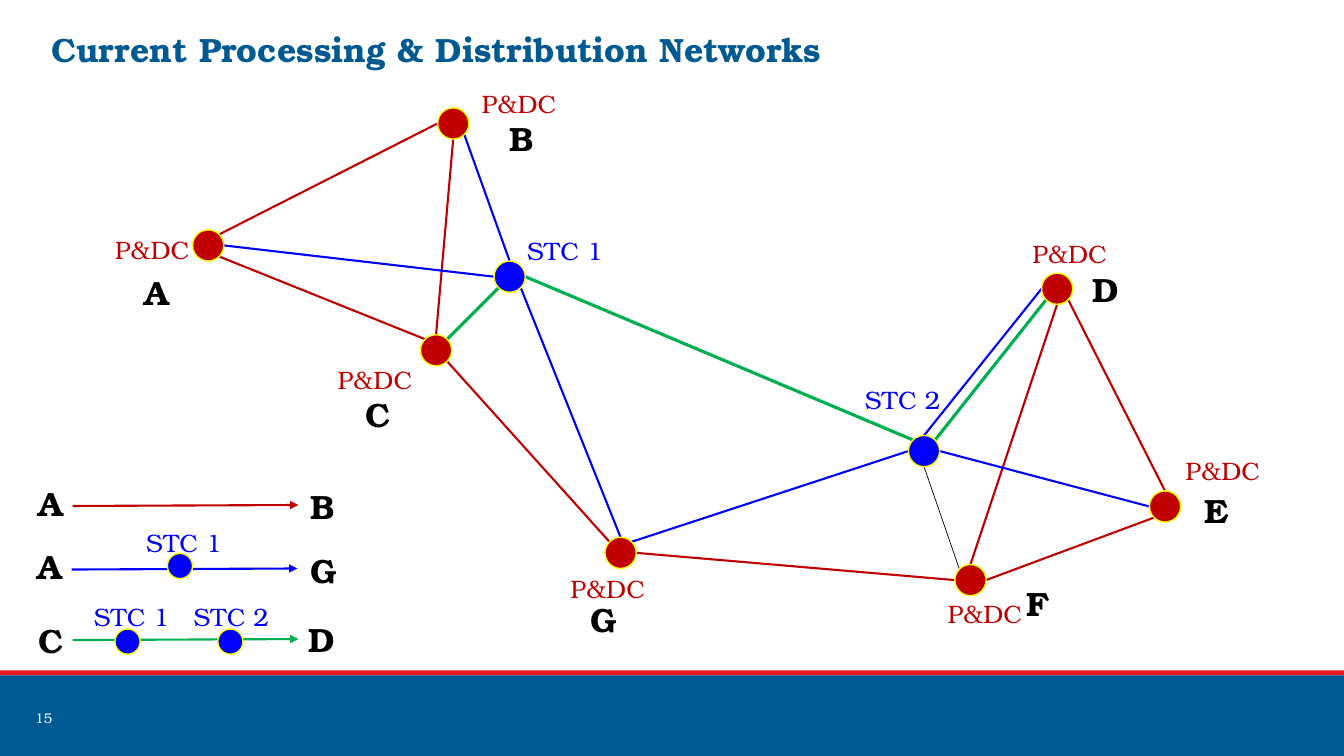
import pptx
import pptx.dml.color
import pptx.enum.shapes
import pptx.enum.text
import pptx.oxml
import pptx.oxml.ns
import pptx.util

PX = 9144  # EMU per px, 100 px to the inch
FONT = "TeX Gyre Bonum"
RED, BLUE, GREEN = "C00000", "0000FF", "00B050"
BLACK, WHITE, YELLOW = "000000", "FFFFFF", "FFFF00"
NAVY, STRIPE = "005A92", "E71921"
NODE, DOT = 31, 25
LABEL_WIDTH, LABEL_HEIGHT = 97, 40
LETTER_WIDTH, LETTER_HEIGHT = 61, 50

# name: (node corner, label corner, letter corner)
CENTERS = {
    "A": ((191, 228), (104, 228), (133, 265)),
    "B": ((434, 107), (468, 83), (495, 112)),
    "C": ((417, 332), (325, 357), (353, 386)),
    "D": ((1033, 271), (1014, 232), (1074, 262)),
    "E": ((1140, 487), (1166, 447), (1185, 481)),
    "F": ((947, 560), (930, 589), (1008, 573)),
    "G": ((600, 533), (556, 564), (576, 589)),
}
HUBS = {
    "STC 1": ((490, 259), (513, 229)),
    "STC 2": ((901, 432), (848, 376)),
}

# Points on a node's rim, as shares of its radius from the centre
RIM = {
    "n": (0, -1), "ne": (0.71, -0.71), "e": (1, 0), "se": (0.71, 0.71),
    "s": (0, 1), "sw": (-0.71, 0.71), "w": (-1, 0), "nw": (-0.71, -0.71),
}

# (colour, weight): links as (from, rim, to, rim)
LINKS = {
    (RED, 1.5): [
        ("A", "se", "C", "nw"), ("C", "n", "B", "s"), ("A", "ne", "B", "w"),
        ("E", "n", "D", "se"), ("F", "n", "D", "s"), ("F", "e", "E", "sw"),
        ("C", "se", "G", "nw"), ("F", "w", "G", "e"),
    ],
    (BLUE, 1.5): [
        ("A", "e", "STC 1", "w"), ("STC 1", "n", "B", "se"),
        ("STC 1", "se", "G", "n"), ("STC 2", "e", "E", "w"),
        ("STC 2", "n", "D", "w"), ("STC 2", "w", "G", "ne"),
    ],
    (GREEN, 2.25): [
        ("STC 1", "e", "STC 2", "nw"), ("STC 1", "sw", "C", "ne"),
        ("D", "sw", "STC 2", "ne"),
    ],
    (BLACK, 0.5): [("STC 2", "s", "F", "nw")],
}

# (colour, arrow start, first letter, last letter, hubs on the way)
ROUTES = [
    (RED, (72, 502), ("A", 28, 474), ("B", 298, 477), []),
    (BLUE, (71, 565), ("A", 27, 537), ("G", 298, 541),
     [("STC 1", (134, 518), (166, 549))]),
    (GREEN, (72, 635), ("C", 28, 610), ("D", 296, 609),
     [("STC 1", (82, 592), (114, 624)), ("STC 2", (181, 592), (216, 624))]),
]


def px(length):
    return pptx.util.Emu(round(length * PX))


def color(value):
    return pptx.dml.color.RGBColor.from_string(value)


def add_span(para, text, size, hue, bold=False):
    span = para.add_run()
    span.text = text
    span.font.name = FONT
    span.font.size = pptx.util.Pt(size)
    span.font.bold = bold
    span.font.color.rgb = color(hue)


def add_text(page, text, left, top, width, height, size, hue, bold=False,
             align=pptx.enum.text.PP_ALIGN.LEFT):
    box = page.shapes.add_textbox(px(left), px(top), px(width), px(height))
    box.text_frame.word_wrap = True
    para = box.text_frame.paragraphs[0]
    para.alignment = align
    add_span(para, text, size, hue, bold)


def add_label(page, text, corner, hue, align=pptx.enum.text.PP_ALIGN.LEFT):
    add_text(page, text, *corner, LABEL_WIDTH, LABEL_HEIGHT, 18, hue,
             align=align)


def add_letter(page, letter, left, top):
    add_text(page, letter, left, top, LETTER_WIDTH, LETTER_HEIGHT, 24, BLACK,
             bold=True)


def add_filled(page, kind, left, top, width, height, hue):
    shape = page.shapes.add_shape(kind, px(left), px(top), px(width), px(height))
    shape.shadow.inherit = False
    shape.fill.solid()
    shape.fill.fore_color.rgb = color(hue)
    shape.line.fill.background()
    return shape


def add_node(page, corner, size, hue):
    node = add_filled(page, pptx.enum.shapes.MSO_SHAPE.OVAL, *corner,
                      size, size, hue)
    node.line.color.rgb = color(YELLOW)
    node.line.width = pptx.util.Pt(1)


def add_line(page, start, end, hue, weight, arrow=False):
    line = page.shapes.add_connector(
        pptx.enum.shapes.MSO_CONNECTOR.STRAIGHT, *map(px, start + end))
    line.line.color.rgb = color(hue)
    line.line.width = pptx.util.Pt(weight)
    if arrow:
        pptx.oxml.ns.qn("a:tailEnd")
        head = pptx.oxml.parse_xml(
            f'<a:tailEnd {pptx.oxml.ns.nsdecls("a")} type="triangle"/>')
        line.line._get_or_add_ln().append(head)
    effects = pptx.oxml.parse_xml(f'<a:effectLst {pptx.oxml.ns.nsdecls("a")}/>')
    line._element.spPr.append(effects)


def rim_point(name, side):
    left, top = {**CENTERS, **HUBS}[name][0]
    across, down = RIM[side]
    radius = NODE / 2
    return left + radius * (1 + across), top + radius * (1 + down)


def add_title(page, text):
    title = page.shapes.title
    title.left, title.top = px(41), px(-3)
    title.width, title.height = px(1149), px(109)
    frame = title.text_frame
    frame.word_wrap = True
    frame.auto_size = pptx.enum.text.MSO_AUTO_SIZE.NONE
    frame.vertical_anchor = pptx.enum.text.MSO_ANCHOR.MIDDLE
    para = frame.paragraphs[0]
    para.alignment = pptx.enum.text.PP_ALIGN.LEFT
    para.line_spacing = 0.9
    add_span(para, text, 24, NAVY, bold=True)


def add_footer(page):
    bar = pptx.enum.shapes.MSO_SHAPE.RECTANGLE
    add_filled(page, bar, 0, 665, 1333, 5, STRIPE)
    add_filled(page, bar, 0, 670, 1333, 80, NAVY)
    add_text(page, "15", 25, 699, 300, 40, 10, WHITE)


def add_network(page):
    for (hue, weight), links in LINKS.items():
        for start, start_side, end, end_side in links:
            add_line(page, rim_point(start, start_side),
                     rim_point(end, end_side), hue, weight)
    for letter, (corner, label, letter_corner) in CENTERS.items():
        add_node(page, corner, NODE, RED)
        add_label(page, "P&DC", label, RED)
        add_letter(page, letter, *letter_corner)
    for name, (corner, label) in HUBS.items():
        add_node(page, corner, NODE, BLUE)
        add_label(page, name, label, BLUE)


def add_routes(page):
    """Add the key: one arrow per kind of route, with the hubs it passes."""
    for hue, (left, top), first, last, stops in ROUTES:
        add_line(page, (left, top), (left + 224, top - 1), hue, 1.5, arrow=True)
        add_letter(page, *first)
        add_letter(page, *last)
        for name, label, dot in stops:
            add_label(page, name, label, BLUE, pptx.enum.text.PP_ALIGN.CENTER)
            add_node(page, dot, DOT, BLUE)


def main():
    deck = pptx.Presentation()
    deck.slide_width, deck.slide_height = px(1333), px(750)
    page = deck.slides.add_slide(deck.slide_layouts.get_by_name("Title Only"))
    add_footer(page)
    add_title(page, "Current Processing & Distribution Networks")
    add_network(page)
    add_routes(page)
    deck.save("out.pptx")


if __name__ == "__main__":
    main()
